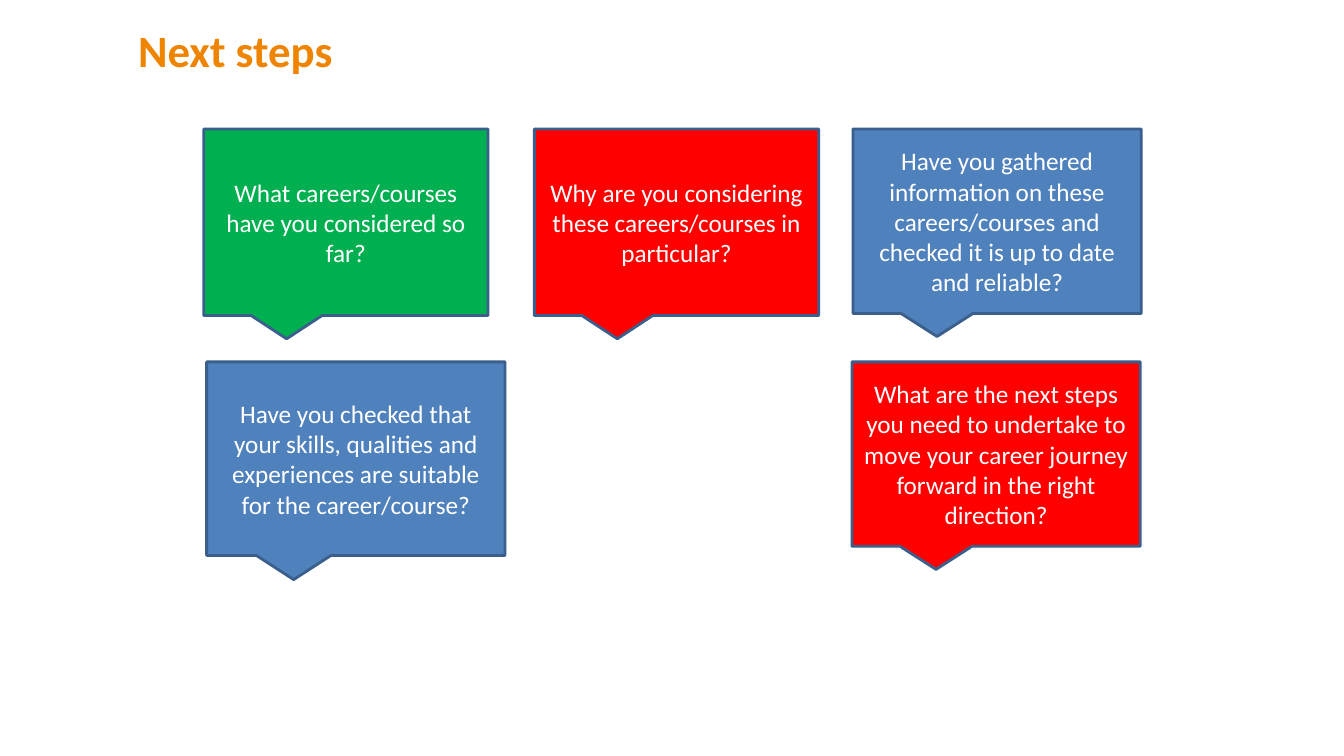
from dataclasses import dataclass

from pptx import Presentation
from pptx.dml.color import RGBColor
from pptx.enum.shapes import MSO_SHAPE
from pptx.enum.text import MSO_ANCHOR, MSO_AUTO_SIZE, PP_ALIGN
from pptx.util import Inches, Pt

CALLOUT = MSO_SHAPE.RECTANGULAR_CALLOUT
TOP, MIDDLE = MSO_ANCHOR.TOP, MSO_ANCHOR.MIDDLE
LEFT, CENTER = PP_ALIGN.LEFT, PP_ALIGN.CENTER
NO_AUTOFIT = MSO_AUTO_SIZE.NONE
TITLE_ONLY = 5


@dataclass(frozen=True)
class Theme:
    font: str = "Calibri"
    title_size: Pt = Pt(32)
    question_size: Pt = Pt(18)
    outline_width: Pt = Pt(2)
    orange: RGBColor = RGBColor(0xEF, 0x84, 0x00)
    white: RGBColor = RGBColor(0xFF, 0xFF, 0xFF)
    green: RGBColor = RGBColor(0x00, 0xB0, 0x50)
    red: RGBColor = RGBColor(0xFF, 0x00, 0x00)
    blue: RGBColor = RGBColor(0x4F, 0x81, 0xBD)
    outline: RGBColor = RGBColor(0x3A, 0x5F, 0x8C)


THEME = Theme()
ROW_1, ROW_2 = 1.28, 3.59

# Box (left, top, width, height in inches), fill, question
QUESTIONS = [
    ((2.02, ROW_1, 2.82, 1.85), THEME.green,
     "What careers/courses have you considered so far?"),
    ((5.3, ROW_1, 2.82, 1.85), THEME.red,
     "Why are you considering these careers/courses in particular?"),
    ((8.46, ROW_1, 2.86, 1.83), THEME.blue,
     "Have you gathered information on these careers/courses and checked "
     "it is up to date and reliable?"),
    ((2.05, ROW_2, 2.96, 1.92), THEME.blue,
     "Have you checked that your skills, qualities and experiences are "
     "suitable for the career/course?"),
    ((8.45, ROW_2, 2.86, 1.83), THEME.red,
     "What are the next steps you need to undertake to move your career "
     "journey forward in the right direction?"),
]


def set_attributes(target, values):
    for name, value in values.items():
        setattr(target, name, value)


def write_text(frame, text, size, color, bold, align):
    frame.text = text
    paragraph = frame.paragraphs[0]
    paragraph.alignment = align
    font = paragraph.runs[0].font
    set_attributes(font, {"name": THEME.font, "size": size, "bold": bold})
    font.color.rgb = color


def place_title(slide, box, text):
    title = slide.shapes.title
    sides = ("left", "top", "width", "height")
    set_attributes(title, dict(zip(sides, map(Inches, box))))
    frame = title.text_frame
    set_attributes(frame, {
        "margin_left": 0, "margin_top": 0, "margin_right": 0,
        "margin_bottom": 0, "vertical_anchor": TOP,
        "auto_size": NO_AUTOFIT, "word_wrap": True,
    })
    write_text(frame, text, THEME.title_size, THEME.orange, True, LEFT)
    frame.paragraphs[0].line_spacing = 0.9


def add_question(slide, box, fill, text):
    question = slide.shapes.add_shape(CALLOUT, *map(Inches, box))
    question.shadow.inherit = False
    question.fill.solid()
    question.fill.fore_color.rgb = fill
    question.line.color.rgb = THEME.outline
    question.line.width = THEME.outline_width
    frame = question.text_frame
    set_attributes(frame, {"word_wrap": True, "vertical_anchor": MIDDLE})
    write_text(frame, text, THEME.question_size, THEME.white, False, CENTER)


def main():
    deck = Presentation()
    set_attributes(deck, {"slide_width": Inches(13.33),
                          "slide_height": Inches(7.5)})
    slide = deck.slides.add_slide(deck.slide_layouts[TITLE_ONLY])
    place_title(slide, (1.37, 0.29, 2.33, 0.49), "Next steps")
    for box, fill, text in QUESTIONS:
        add_question(slide, box, fill, text)
    deck.save("out.pptx")


if __name__ == "__main__":
    main()
